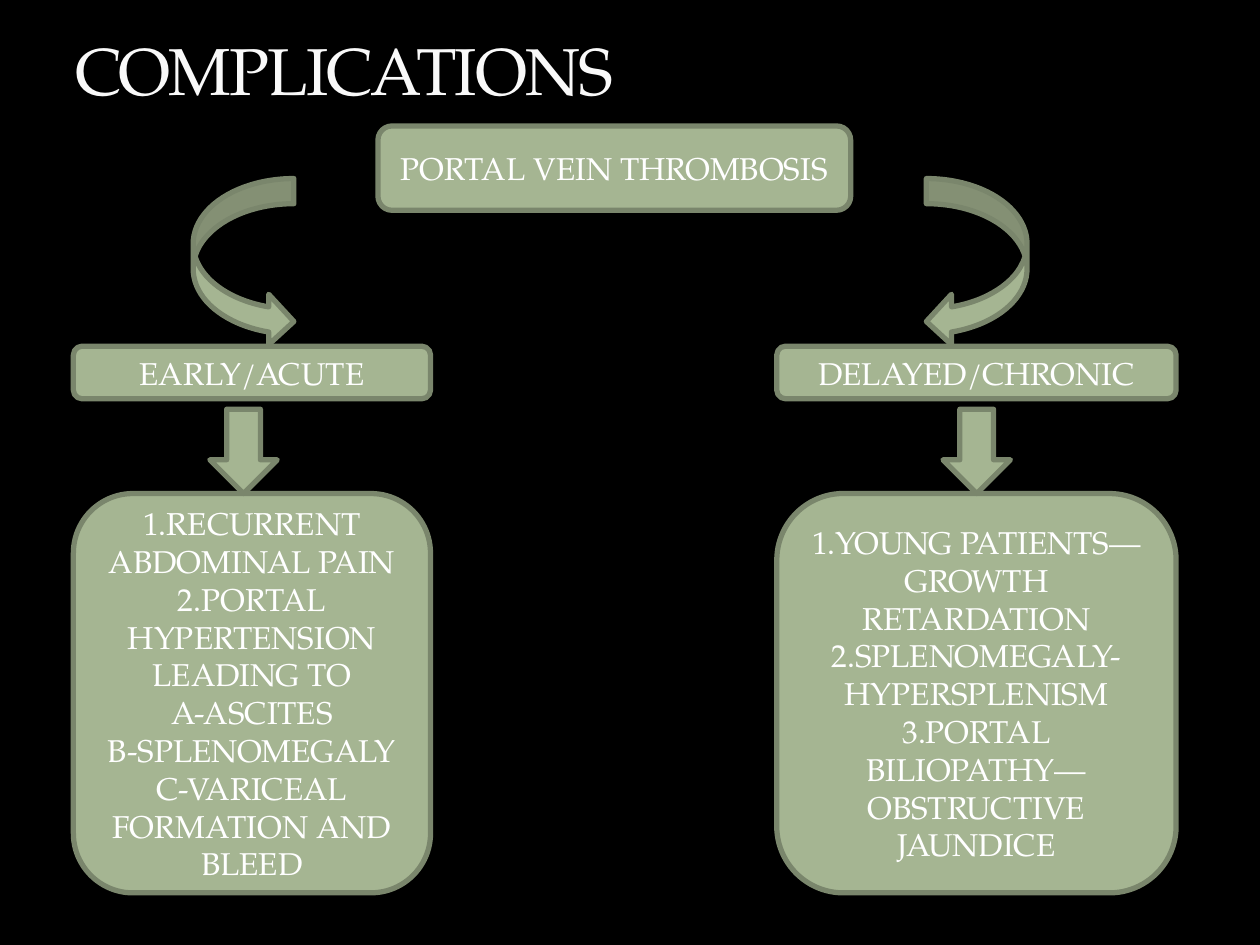
from dataclasses import dataclass

from lxml.etree import SubElement
from pptx import Presentation
from pptx.dml.color import RGBColor
from pptx.enum.shapes import MSO_SHAPE
from pptx.enum.text import MSO_ANCHOR, MSO_AUTO_SIZE, PP_ALIGN
from pptx.oxml.ns import qn
from pptx.util import Cm, Pt


@dataclass(frozen=True)
class Theme:
    font: str = "TeX Gyre Pagella"
    background: RGBColor = RGBColor(0x00, 0x00, 0x00)
    title: RGBColor = RGBColor(0xF9, 0xF9, 0xF9)
    title_edge: str = "3C4422"
    text: RGBColor = RGBColor(0xFF, 0xFF, 0xFF)
    fill: RGBColor = RGBColor(0xA5, 0xB5, 0x92)
    line: RGBColor = RGBColor(0x7A, 0x86, 0x6C)
    title_size: float = 37.8
    text_size: float = 18
    line_width: float = 3


class Deck:
    """Holds the theme and the current slide, and draws its elements."""

    def __init__(self, theme):
        self.theme = theme
        self.prs = Presentation()
        self.prs.slide_width, self.prs.slide_height = Cm(25.4), Cm(19.05)
        self.s = self.prs.slides.add_slide(self.prs.slide_layouts[5])
        self.s.background.fill.solid()
        self.s.background.fill.fore_color.rgb = theme.background

    def set_font(self, p, size, color):
        p.font.name = self.theme.font
        p.font.size = Pt(size)
        p.font.color.rgb = color

    def title(self, text, x, y, w, h):
        sp = self.s.shapes.title
        sp.left, sp.top, sp.width, sp.height = Cm(x), Cm(y), Cm(w), Cm(h)
        tf = sp.text_frame
        tf.text = text
        tf.vertical_anchor = MSO_ANCHOR.BOTTOM
        tf.auto_size = MSO_AUTO_SIZE.NONE
        p = tf.paragraphs[0]
        p.alignment = PP_ALIGN.LEFT
        self.set_font(p, self.theme.title_size, self.theme.title)
        rPr = p.runs[0]._r.get_or_add_rPr()
        rPr.set("spc", "-100")
        ln = SubElement(rPr, qn("a:ln"), w=str(Pt(0.25)))
        fill = SubElement(ln, qn("a:solidFill"))
        color = SubElement(fill, qn("a:srgbClr"), val=self.theme.title_edge)
        SubElement(color, qn("a:alpha"), val="25000")

    def shape(self, kind, x, y, w, h):
        sp = self.s.shapes.add_shape(kind, Cm(x), Cm(y), Cm(w), Cm(h))
        sp.shadow.inherit = False
        sp.fill.solid()
        sp.fill.fore_color.rgb = self.theme.fill
        sp.line.color.rgb = self.theme.line
        sp.line.width = Pt(self.theme.line_width)
        return sp

    def box(self, lines, x, y, w, h):
        tf = self.shape(MSO_SHAPE.ROUNDED_RECTANGLE, x, y, w, h).text_frame
        tf.text = "\n".join(lines)
        tf.word_wrap = True
        tf.vertical_anchor = MSO_ANCHOR.MIDDLE
        for p in tf.paragraphs:
            p.alignment = PP_ALIGN.CENTER
            self.set_font(p, self.theme.text_size, self.theme.text)

    def arrow(self, kind, center, y, w, h):
        self.shape(kind, center - w / 2, y, w, h)

    def branch(self, heading, lines, x, w, center, curve):
        self.box([heading], x, 6.98, w, 1.06)
        self.arrow(curve, center, 3.6, 2.03, 3.39)
        self.box(lines, x, 9.95, w, 8.05)
        self.arrow(MSO_SHAPE.DOWN_ARROW, center, 8.25, 1.36, 1.7)


def main():
    deck = Deck(Theme())
    deck.title("COMPLICATIONS", 1.27, 0.43, 22.86, 1.9)
    deck.box(["PORTAL VEIN THROMBOSIS"], 7.62, 2.54, 9.53, 1.7)
    deck.branch(
        "EARLY/ACUTE",
        ["1.RECURRENT ABDOMINAL PAIN",
         "2.PORTAL HYPERTENSION LEADING TO",
         "A-ASCITES",
         "B-SPLENOMEGALY",
         "C-VARICEAL FORMATION AND BLEED"],
        1.48, 7.2, 4.91, MSO_SHAPE.CURVED_RIGHT_ARROW)
    deck.branch(
        "DELAYED/CHRONIC",
        ["1.YOUNG PATIENTS—GROWTH RETARDATION",
         "2.SPLENOMEGALY-HYPERSPLENISM",
         "3.PORTAL BILIOPATHY—OBSTRUCTIVE JAUNDICE"],
        15.66, 8.05, 19.69, MSO_SHAPE.CURVED_LEFT_ARROW)
    deck.prs.save("out.pptx")


if __name__ == "__main__":
    main()
